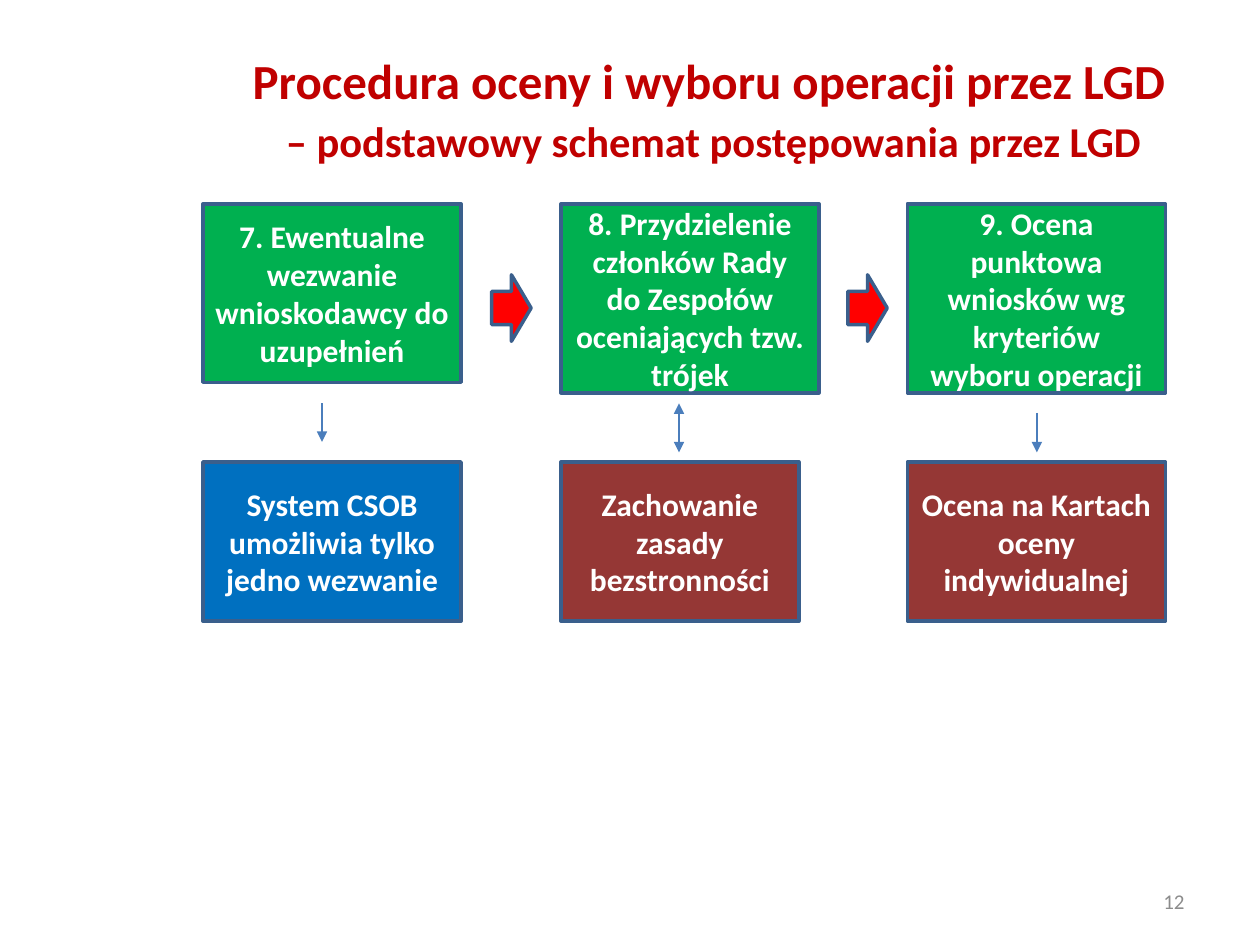
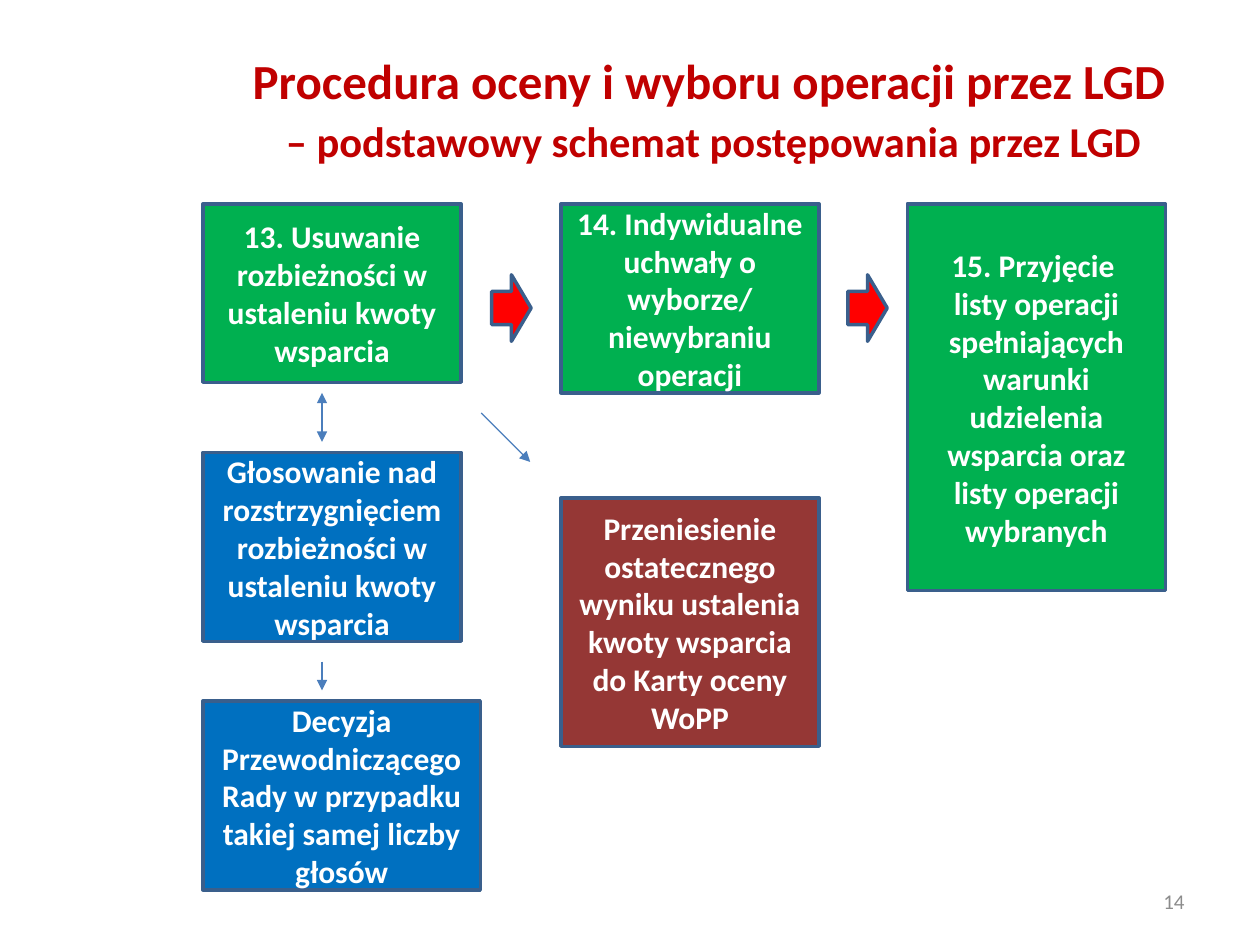
from dataclasses import dataclass

from lxml import etree
from pptx import Presentation
from pptx.dml.color import RGBColor
from pptx.enum import shapes, text
from pptx.oxml import ns
from pptx.util import Pt


@dataclass(frozen=True)
class Theme:
    face: str = "Calibri"
    title: str = "C00000"
    green: str = "00B050"
    blue: str = "0070C0"
    brown: str = "953735"
    red: str = "FF0000"
    edge: str = "3A5F8C"
    line: str = "4B7EBC"
    white: str = "FFFFFF"
    grey: str = "8C8C8C"
    head: float = 28
    sub: float = 24.3
    body: float = 18
    small: float = 12


LEFT, MID, RIGHT = COLS = 116, 320.5, 518.5
TOP, WIDE, TALL = 116.5, 147.5, 108


class Deck:
    """Builds slides in one style, each drawn on the current slide."""

    def __init__(self, theme):
        self.theme = theme
        self.show = Presentation()
        self.show.slide_width, self.show.slide_height = Pt(720), Pt(540)
        self.slide = None

    def letter(self, frame, lines, color, align, bold=True):
        form = {"word_wrap": True, "vertical_anchor": text.MSO_ANCHOR.MIDDLE}
        for key, value in form.items():
            setattr(frame, key, value)
        for i, (words, size) in enumerate(lines):
            para = frame.add_paragraph() if i else frame.paragraphs[0]
            para.text, para.alignment = words, align
            if i:
                para.space_before = Pt(3)
            font = {"name": self.theme.face, "size": Pt(size), "bold": bold}
            for run in para.runs:
                for key, value in font.items():
                    setattr(run.font, key, value)
                run.font.color.rgb = RGBColor.from_string(color)

    def label(self, area, lines, color, align, bold=True):
        box = self.slide.shapes.add_textbox(*map(Pt, area))
        self.letter(box.text_frame, lines, color, align, bold)

    def page(self, number):
        t = self.theme
        self.slide = self.show.slides.add_slide(self.show.slide_layouts[6])
        lines = [("Procedura oceny i wyboru operacji przez LGD", t.head),
                 (" – podstawowy schemat postępowania przez LGD", t.sub)]
        self.label((96, 12, 618, 100), lines, t.title, text.PP_ALIGN.CENTER)
        self.label((516, 500.5, 168, 29), [(str(number), t.small)], t.grey,
                   text.PP_ALIGN.RIGHT, False)
        for x in (281, 484.5):
            self.shape("RIGHT_ARROW", (x, 157, 22.5, 38), t.red)

    def shape(self, kind, area, fill):
        item = self.slide.shapes.add_shape(
            getattr(shapes.MSO_SHAPE, kind), *map(Pt, area))
        item.shadow.inherit = False
        item.fill.solid()
        item.fill.fore_color.rgb = RGBColor.from_string(fill)
        item.line.color.rgb = RGBColor.from_string(self.theme.edge)
        item.line.width = Pt(2)
        return item

    def box(self, words, fill, x, y=TOP, high=TALL, wide=WIDE):
        item = self.shape("RECTANGLE", (x, y, wide, high), fill)
        self.letter(item.text_frame, [(words, self.theme.body)],
                    self.theme.white, text.PP_ALIGN.CENTER)

    def arrow(self, start, end, both=False):
        link = self.slide.shapes.add_connector(
            shapes.MSO_CONNECTOR.STRAIGHT, *map(Pt, start + end))
        link.line.color.rgb = RGBColor.from_string(self.theme.line)
        link.line.width = Pt(0.75)
        props = link.element.spPr
        for tag in ("headEnd", "tailEnd") if both else ("tailEnd",):
            etree.SubElement(props.find(ns.qn("a:ln")), ns.qn("a:" + tag),
                             type="triangle")
        etree.SubElement(props, ns.qn("a:effectLst"))

    def drop(self, x, top, end, both=False):
        self.arrow((x, top), (x, end), both)


def review(deck):
    t = deck.theme
    deck.page(12)
    steps = [("7. Ewentualne wezwanie wnioskodawcy do uzupełnień", 102),
             ("8. Przydzielenie członków Rady do Zespołów oceniających tzw. "
              "trójek", TALL),
             ("9. Ocena punktowa wniosków wg kryteriów wyboru operacji", TALL)]
    notes = [("System CSOB umożliwia tylko jedno wezwanie", t.blue, WIDE),
             ("Zachowanie zasady bezstronności", t.brown, 136),
             ("Ocena na Kartach oceny indywidualnej", t.brown, WIDE)]
    for x, (step, high), (note, fill, wide) in zip(COLS, steps, notes):
        deck.box(step, t.green, x, high=high)
        deck.box(note, fill, x, 264, 91, wide)
    deck.drop(184, 230.5, 252.5)
    deck.drop(388, 230.5, 258.5, both=True)
    deck.drop(592.5, 236, 258.5)


def decide(deck):
    t = deck.theme
    deck.page(14)
    deck.box("13. Usuwanie rozbieżności w ustaleniu kwoty wsparcia", t.green,
             LEFT, high=102)
    deck.box("14. Indywidualne uchwały o wyborze/ niewybraniu operacji",
             t.green, MID)
    deck.box("15. Przyjęcie \vlisty operacji spełniających warunki udzielenia "
             "wsparcia oraz listy operacji wybranych", t.green, RIGHT, high=221)
    deck.box("Głosowanie nad rozstrzygnięciem rozbieżności w ustaleniu kwoty "
             "wsparcia", t.blue, LEFT, 258.5)
    deck.box("Decyzja Przewodniczącego Rady w przypadku takiej samej liczby "
             "głosów", t.blue, LEFT, 400.5, wide=158.5)
    deck.box("Przeniesienie ostatecznego wyniku ustalenia kwoty wsparcia do "
             "Karty oceny WoPP", t.brown, MID, 284.5, 142)
    deck.drop(184, 224.5, 252.5, both=True)
    deck.drop(184, 378, 394.5)
    deck.arrow((275, 236), (303, 264))


def main():
    deck = Deck(Theme())
    review(deck)
    decide(deck)
    deck.show.save("out.pptx")


if __name__ == "__main__":
    main()
